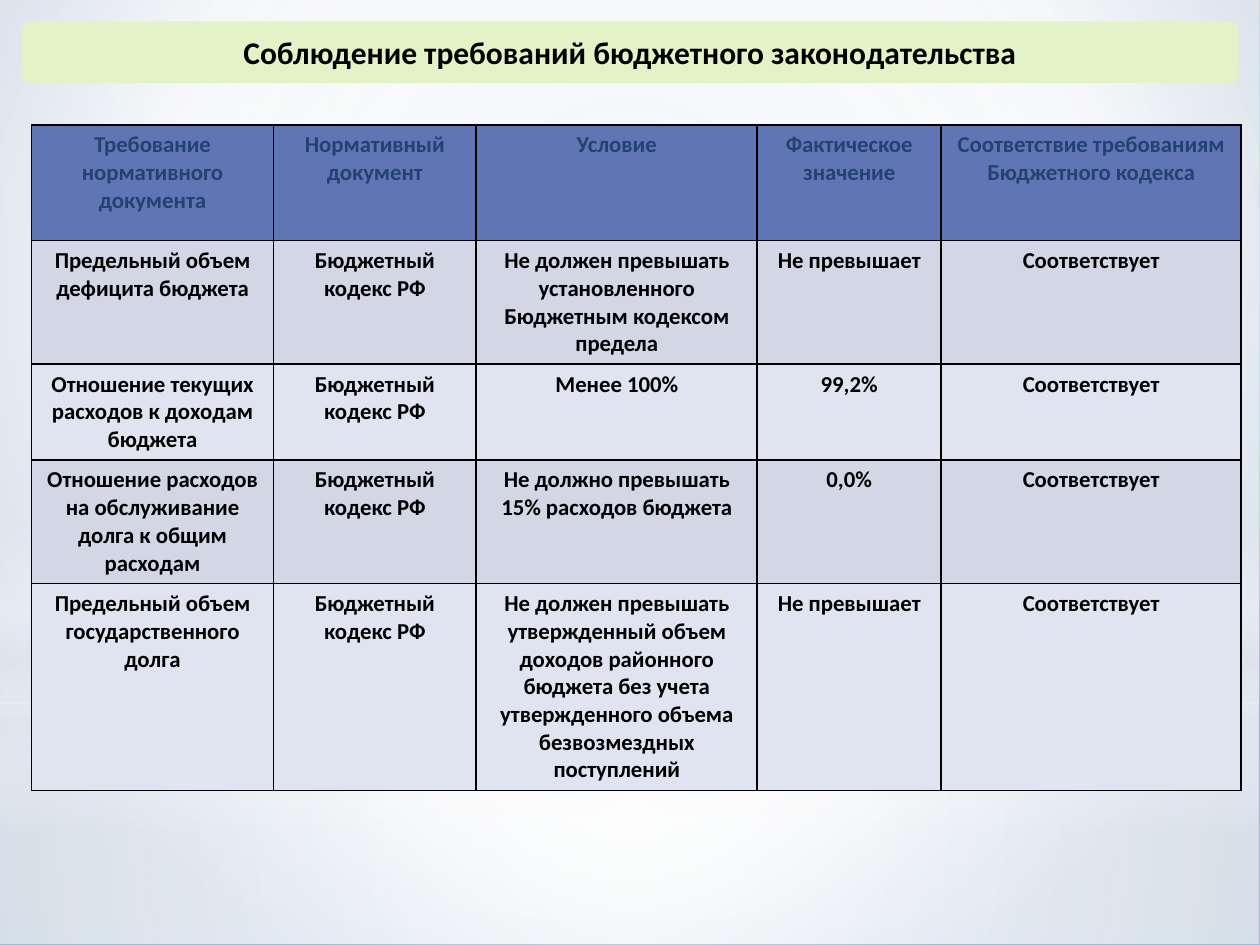
from lxml import etree
from pptx import Presentation
from pptx.dml.color import RGBColor
from pptx.enum.shapes import MSO_SHAPE
from pptx.enum.text import MSO_ANCHOR, PP_ALIGN
from pptx.oxml.ns import qn
from pptx.util import Inches, Pt

RECTANGLE = MSO_SHAPE.RECTANGLE
OVAL = MSO_SHAPE.OVAL
ROUNDED = MSO_SHAPE.ROUNDED_RECTANGLE
CENTER = PP_ALIGN.CENTER
MIDDLE = MSO_ANCHOR.MIDDLE

FONT = "Calibri"
BLACK = RGBColor(0x00, 0x00, 0x00)
WHITE = RGBColor(0xFF, 0xFF, 0xFF)
MIST = RGBColor(0xE4, 0xE9, 0xEF)
SKY = RGBColor(0xD7, 0xDF, 0xE7)
STEEL = RGBColor(0xA2, 0xB9, 0xD3)
LIME = RGBColor(0xE3, 0xF2, 0xC7)
NAVY = RGBColor(0x23, 0x42, 0x71)
HEADER_BLUE = RGBColor(0x60, 0x76, 0xB4)
BANDS = (RGBColor(0xD2, 0xD6, 0xE5), RGBColor(0xDF, 0xE4, 0xF0))

BACKDROP_STOPS = [(0, SKY, 100), (60, WHITE, 100), (100, STEEL, 100)]
GLOWS = [
    (RECTANGLE, (0, 5.58, 9.99, 1.91), [(0, WHITE, 91), (37, WHITE, 76), (100, MIST, 79)], None),
    (RECTANGLE, (0, 0, 9.99, 5.58), [(0, WHITE, 89), (48, WHITE, 62), (100, MIST, 79)], None),
    (RECTANGLE, (0, 4.12, 9.99, 2.49),
     [(0, WHITE, 0), (29, WHITE, 30), (45, MIST, 40), (55, WHITE, 26), (65, MIST, 60), (100, WHITE, 0)], 90),
    (OVAL, (0, 1.75, 9.99, 5.58), [(0, WHITE, 100), (56, WHITE, 0)], None),
]

TITLE = "Соблюдение требований бюджетного законодательства"
CODE = "Бюджетный кодекс РФ"
MEETS = "Соответствует"
WITHIN = "Не превышает"
COLUMN_WIDTHS = (1.92, 1.61, 2.23, 1.46, 2.38)
ROW_HEIGHTS = (0.92, 0.97, 0.75, 0.97, 1.62)
ROWS = [
    ("Требование нормативного документа", "Нормативный документ", "Условие",
     "Фактическое значение", "Соответствие требованиям Бюджетного кодекса"),
    ("Предельный объем дефицита бюджета", CODE,
     "Не должен превышать установленного Бюджетным кодексом предела", WITHIN, MEETS),
    ("Отношение текущих расходов к доходам бюджета", CODE, "Менее 100%", "99,2%", MEETS),
    ("Отношение расходов на обслуживание долга к общим расходам", CODE,
     "Не должно превышать 15% расходов бюджета", "0,0%", MEETS),
    ("Предельный объем государственного долга", CODE,
     "Не должен превышать утвержденный объем доходов районного бюджета "
     "без учета утвержденного объема безвозмездных поступлений", WITHIN, MEETS),
]


def set_gradient(holder, stops, angle=None, focus=(50, 50, 50, 50)):
    """Replace the solid fill in holder with a linear or circular gradient."""
    gradient = etree.Element(qn("a:gradFill"), rotWithShape="1")
    stop_list = etree.SubElement(gradient, qn("a:gsLst"))
    for position, color, opacity in stops:
        stop = etree.SubElement(stop_list, qn("a:gs"), pos=str(position * 1000))
        tint = etree.SubElement(stop, qn("a:srgbClr"), val=str(color))
        if opacity < 100:
            etree.SubElement(tint, qn("a:alpha"), val=str(opacity * 1000))
    if angle is None:
        circle = etree.SubElement(gradient, qn("a:path"), path="circle")
        sides = {side: str(share * 1000) for side, share in zip("ltrb", focus)}
        etree.SubElement(circle, qn("a:fillToRect"), sides)
    else:
        etree.SubElement(gradient, qn("a:lin"), ang=str(angle * 60000), scaled="0")
    holder.replace(holder.find(qn("a:solidFill")), gradient)


def add_plain_shape(page, preset, box, color):
    """Add a preset shape without outline or shadow."""
    shape = page.shapes.add_shape(preset, *map(Inches, box))
    shape.shadow.inherit = False
    shape.fill.solid()
    shape.fill.fore_color.rgb = color
    shape.line.fill.background()
    return shape


def write_text(frame, text, size, color):
    """Write one bold centred paragraph."""
    frame.text = text
    para = frame.paragraphs[0]
    para.alignment = CENTER
    for span in para.runs:
        span.font.name = FONT
        span.font.size = Pt(size)
        span.font.bold = True
        span.font.color.rgb = color


def add_backdrop(page):
    """Paint the background and the soft glows over it."""
    page.background.fill.solid()
    set_gradient(page.element.find(".//" + qn("p:bgPr")), BACKDROP_STOPS, focus=(50, 25, 50, 75))
    for preset, box, stops, angle in GLOWS:
        glow = add_plain_shape(page, preset, box, WHITE)
        set_gradient(glow.element.spPr, stops, angle)


def add_title(page, box):
    """Add the rounded title banner."""
    banner = add_plain_shape(page, ROUNDED, box, LIME)
    banner.text_frame.word_wrap = True
    banner.text_frame.vertical_anchor = MIDDLE
    write_text(banner.text_frame, TITLE, 18, BLACK)


def add_borders(cell):
    """Draw a thin black line on all four sides of a cell."""
    properties = cell._tc.get_or_add_tcPr()
    for side in ("a:lnL", "a:lnR", "a:lnT", "a:lnB"):
        line = etree.SubElement(properties, qn(side), w=str(Pt(0.96)))
        fill = etree.SubElement(line, qn("a:solidFill"))
        etree.SubElement(fill, qn("a:srgbClr"), val=str(BLACK))


def add_requirements(page, box):
    """Add the table of budget requirements."""
    table = page.shapes.add_table(len(ROWS), len(COLUMN_WIDTHS), *map(Inches, box)).table
    for column, width in zip(table.columns, COLUMN_WIDTHS):
        column.width = Inches(width)
    for index, (row, height, texts) in enumerate(zip(table.rows, ROW_HEIGHTS, ROWS)):
        row.height = Inches(height)
        for cell, text in zip(row.cells, texts):
            add_borders(cell)
            cell.fill.solid()
            cell.fill.fore_color.rgb = BANDS[(index - 1) % 2] if index else HEADER_BLUE
            write_text(cell.text_frame, text, 13, BLACK if index else NAVY)


def main():
    """Build and save the slide."""
    deck = Presentation()
    deck.slide_width, deck.slide_height = Inches(10), Inches(7.5)
    page = deck.slides.add_slide(deck.slide_layouts[6])
    add_backdrop(page)
    add_title(page, (0.17, 0.17, 9.66, 0.49))
    add_requirements(page, (0.25, 0.99, sum(COLUMN_WIDTHS), sum(ROW_HEIGHTS)))
    deck.save("out.pptx")


if __name__ == "__main__":
    main()
